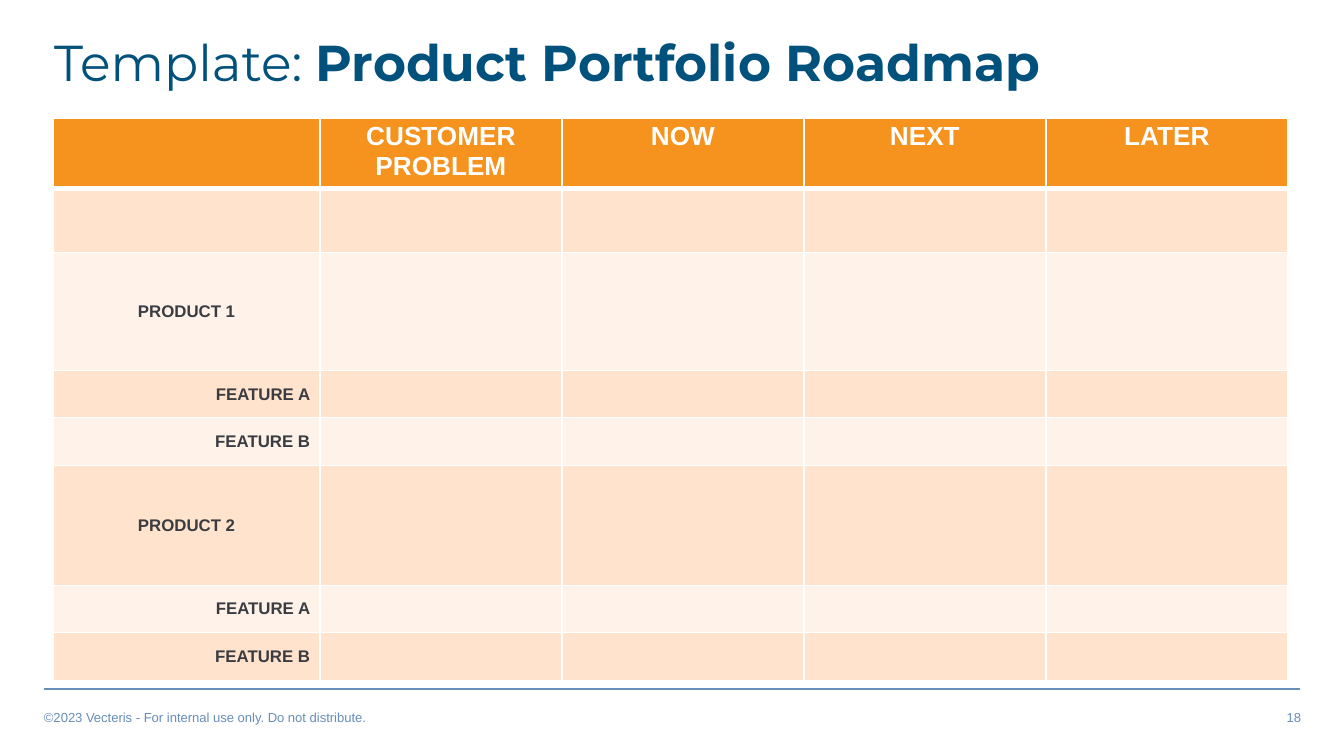
from dataclasses import dataclass

import lxml.etree
import pptx
import pptx.dml.color
import pptx.enum.shapes
import pptx.enum.text
import pptx.oxml.ns
import pptx.util

ALIGN = pptx.enum.text.PP_ALIGN
ANCHOR = pptx.enum.text.MSO_ANCHOR
SLIDE_WIDTH, SLIDE_HEIGHT = 1344, 756
COLORS = {
    "title": "00517C",
    "footer": "668EB9",
    "header": "F6921E",
    "band_dark": "FFE3CD",
    "band_light": "FFF2E8",
    "label": "3A3C41",
    "white": "FFFFFF",
}


@dataclass(frozen=True)
class RoadmapRow:
    label: str
    height: int
    align: ALIGN = ALIGN.CENTER


@dataclass(frozen=True)
class FooterNote:
    text: str
    left: int
    align: ALIGN


HEADINGS = ["", "CUSTOMER PROBLEM", "NOW", "NEXT", "LATER"]
COLUMN_WIDTHS = [267, 242, 242, 242, 242]
HEADER_HEIGHT = 69
ROADMAP_ROWS = [
    RoadmapRow("", 64),
    RoadmapRow("PRODUCT 1", 118),
    RoadmapRow("FEATURE A", 47, ALIGN.RIGHT),
    RoadmapRow("FEATURE B", 48, ALIGN.RIGHT),
    RoadmapRow("PRODUCT 2", 120),
    RoadmapRow("FEATURE A", 47, ALIGN.RIGHT),
    RoadmapRow("FEATURE B", 48, ALIGN.RIGHT),
]
FOOTER_NOTES = [
    FooterNote("©2023 Vecteris - For internal use only. Do not distribute.", 34, ALIGN.LEFT),
    FooterNote("18", 773, ALIGN.RIGHT),
]


def px(length: int) -> pptx.util.Emu:
    return pptx.util.Emu(round(length * pptx.util.Inches(10) / SLIDE_WIDTH))


def rgb(name: str) -> pptx.dml.color.RGBColor:
    return pptx.dml.color.RGBColor.from_string(COLORS[name])


def style_font(font, size: int, color: str, bold: bool = False, face: str = "Arial") -> None:
    font.name = face
    font.size = pptx.util.Pt(size)
    font.bold = bold
    font.color.rgb = rgb(color)


def set_margins(holder, horizontal: int, vertical: int) -> None:
    holder.margin_left = holder.margin_right = px(horizontal)
    holder.margin_top = holder.margin_bottom = px(vertical)


def set_borders(cell, bottom_points: int) -> None:
    properties = cell._tc.get_or_add_tcPr()
    widths = {"lnL": 1, "lnR": 1, "lnT": 1, "lnB": bottom_points}
    for edge, points in widths.items():
        line = lxml.etree.SubElement(properties, pptx.oxml.ns.qn(f"a:{edge}"))
        line.set("w", str(pptx.util.Pt(points)))
        fill = lxml.etree.SubElement(line, pptx.oxml.ns.qn("a:solidFill"))
        color = lxml.etree.SubElement(fill, pptx.oxml.ns.qn("a:srgbClr"))
        color.set("val", COLORS["white"])


def fill_cell(cell, text: str, fill: str, size: int, color: str, align: ALIGN,
              bottom_points: int = 1) -> None:
    set_borders(cell, bottom_points)
    cell.fill.solid()
    cell.fill.fore_color.rgb = rgb(fill)
    set_margins(cell, 10, 4 if text else 0)
    if text:
        cell.text = text
        paragraph = cell.text_frame.paragraphs[0]
        paragraph.alignment = align
        style_font(paragraph.font, size, color, bold=True)


def draw_title(slide) -> None:
    title = slide.shapes.title
    title.left, title.top, title.width, title.height = px(44), px(33), px(1036), px(77)
    frame = title.text_frame
    frame.word_wrap = True
    frame.auto_size = pptx.enum.text.MSO_AUTO_SIZE.NONE
    frame.vertical_anchor = ANCHOR.TOP
    set_margins(frame, 10, 5)
    heading = frame.paragraphs[0]
    heading.alignment = ALIGN.LEFT
    heading.line_spacing = 0.9
    for text, bold in [("Template: ", False), ("Product Portfolio Roadmap", True)]:
        run = heading.add_run()
        run.text = text
        style_font(run.font, 27, "title", bold, "Montserrat")


def draw_footer_rule(slide) -> None:
    rule = slide.shapes.add_connector(
        pptx.enum.shapes.MSO_CONNECTOR.STRAIGHT, px(44), px(689), px(1300), px(689))
    rule.line.color.rgb = rgb("footer")
    rule.line.width = pptx.util.Pt(1)
    lxml.etree.SubElement(rule._element.spPr, pptx.oxml.ns.qn("a:effectLst"))


def draw_footer_note(slide, note: FooterNote) -> None:
    frame = slide.shapes.add_textbox(px(note.left), px(704), px(538), px(26)).text_frame
    frame.word_wrap = True
    frame.vertical_anchor = ANCHOR.MIDDLE
    set_margins(frame, 10, 5)
    paragraph = frame.paragraphs[0]
    paragraph.text = note.text
    paragraph.alignment = note.align
    style_font(paragraph.font, 7, "footer")


def draw_roadmap(slide) -> None:
    heights = [HEADER_HEIGHT] + [row.height for row in ROADMAP_ROWS]
    roadmap = slide.shapes.add_table(
        len(heights), len(HEADINGS), px(53), px(118),
        px(sum(COLUMN_WIDTHS)), px(sum(heights))).table
    for column, width in zip(roadmap.columns, COLUMN_WIDTHS):
        column.width = px(width)
    for row, height in zip(roadmap.rows, heights):
        row.height = px(height)
    for column, heading in enumerate(HEADINGS):
        fill_cell(roadmap.cell(0, column), heading, "header", 14, "white", ALIGN.CENTER, 3)
    for index, row in enumerate(ROADMAP_ROWS, start=1):
        band = "band_dark" if index % 2 else "band_light"
        for column in range(len(HEADINGS)):
            cell = roadmap.cell(index, column)
            fill_cell(cell, "" if column else row.label, band, 9, "label", row.align)
            cell.vertical_anchor = ANCHOR.MIDDLE


def main() -> None:
    presentation = pptx.Presentation()
    presentation.slide_width = px(SLIDE_WIDTH)
    presentation.slide_height = px(SLIDE_HEIGHT)
    slide = presentation.slides.add_slide(presentation.slide_layouts[5])
    draw_footer_rule(slide)
    for note in FOOTER_NOTES:
        draw_footer_note(slide, note)
    draw_title(slide)
    draw_roadmap(slide)
    presentation.save("out.pptx")


if __name__ == "__main__":
    main()
